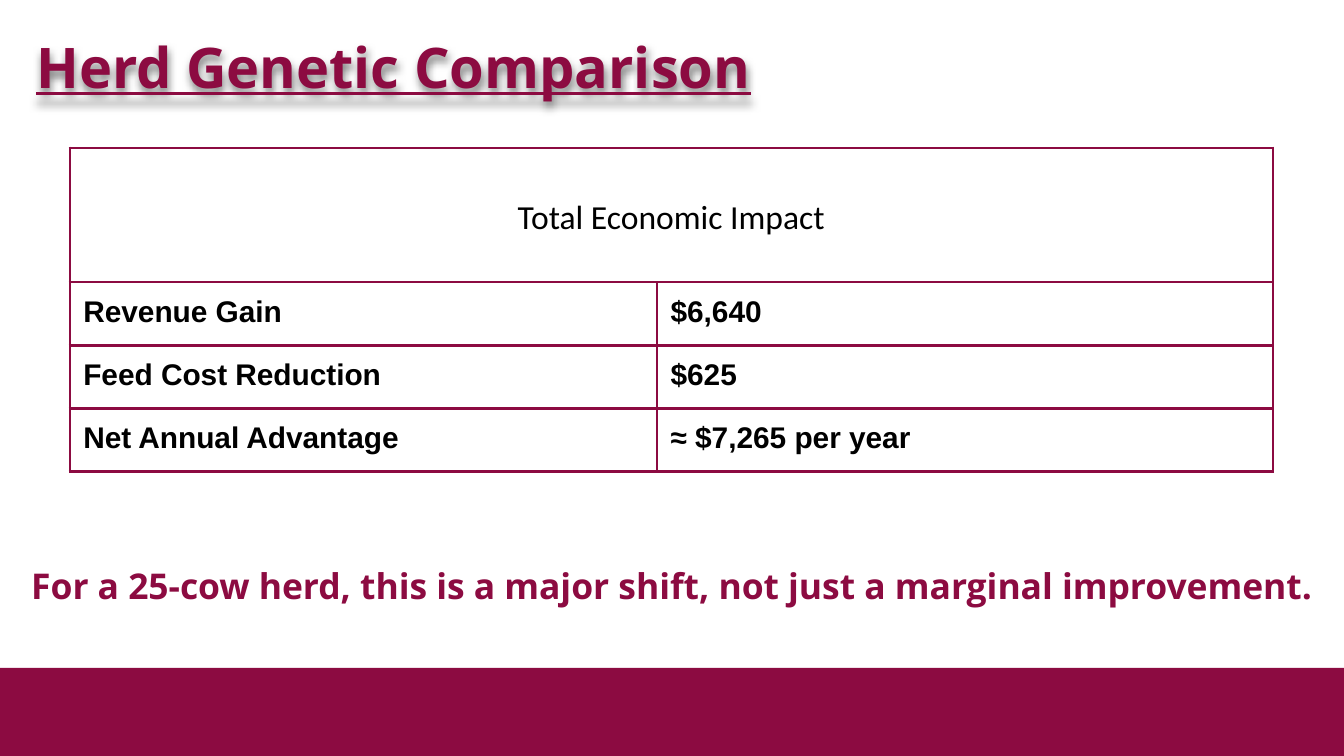
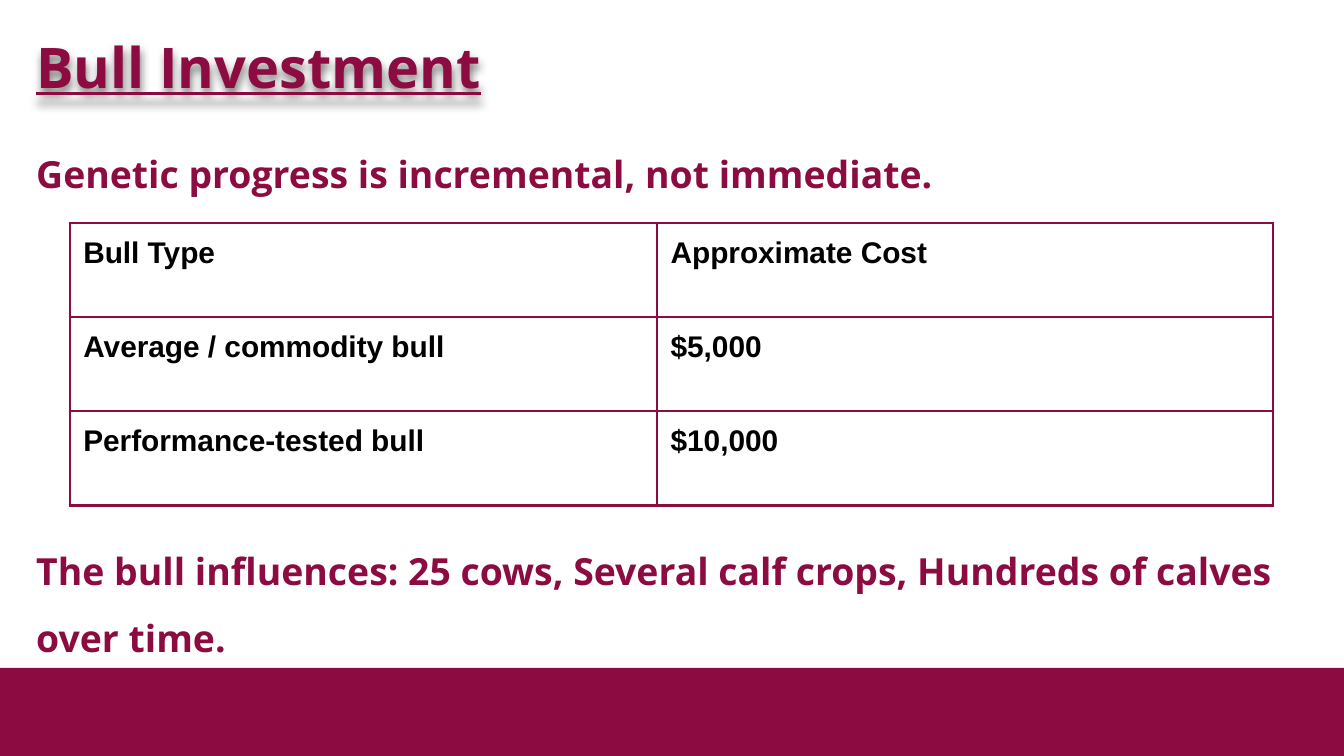
from dataclasses import dataclass

from lxml import etree
from pptx import Presentation
from pptx.dml.color import RGBColor
from pptx.enum.shapes import MSO_SHAPE
from pptx.enum.text import MSO_ANCHOR, PP_ALIGN
from pptx.oxml import parse_xml
from pptx.util import Inches, Pt

RECTANGLE = MSO_SHAPE.RECTANGLE
TOP, MIDDLE = MSO_ANCHOR.TOP, MSO_ANCHOR.MIDDLE
LEFT, CENTER = PP_ALIGN.LEFT, PP_ALIGN.CENTER
DRAWING = "http://schemas.openxmlformats.org/drawingml/2006/main"


@dataclass(frozen=True)
class Theme:
    maroon: str = "8C0B41"
    black: str = "000000"
    heading_font: str = "Open Sans"
    table_font: str = "Arial"
    title_size: int = 30
    statement_size: int = 20
    table_title_size: int = 18
    cell_size: int = 16
    border_width: float = 1.5


THEME = Theme()
WIDTH, HEIGHT = 10, 5.625
MARGIN = 0.2
FULL = (0, WIDTH)
INSET = (MARGIN, WIDTH - 2 * MARGIN)
BAND_TOP = 4.97
TABLE_LEFT = 0.52
COLUMN_WIDTHS = (4.37, 4.58)
CELL_MARGIN = 0.1

# Content; a statement holds text, (left, width), top, height, size, alignment
SLIDES = [
    {
        "title": "Herd Genetic Comparison",
        "table": {
            "top": 1.1,
            "title": "Total Economic Impact",
            "title_height": 1,
            "row_height": 0.47,
            "rows": [
                ("Revenue Gain", "$6,640"),
                ("Feed Cost Reduction", "$625"),
                ("Net Annual Advantage", "≈ $7,265 per year"),
            ],
        },
        "statements": [
            ("For a 25-cow herd, this is a major shift, not just a marginal improvement.",
             FULL, 3.67, 1.21, 19, CENTER),
        ],
    },
    {
        "title": "Bull Investment",
        "table": {
            "top": 1.66,
            "row_height": 0.7,
            "rows": [
                ("Bull Type", "Approximate Cost"),
                ("Average / commodity bull", "$5,000"),
                ("Performance-tested bull", "$10,000"),
            ],
        },
        "statements": [
            ("Genetic progress is incremental, not immediate.",
             INSET, 0.7, 1.02, THEME.statement_size, LEFT),
            ("The bull influences: 25 cows, Several calf crops, Hundreds of calves over time.",
             INSET, 3.9, 1.02, THEME.statement_size, LEFT),
        ],
    },
]


def style_font(font, name, size, color):
    font.name, font.size, font.bold = name, Pt(size), True
    font.color.rgb = RGBColor.from_string(color)


def add_text(slide, text, span, top, height, size, align=LEFT, anchor=MIDDLE, line_spacing=1.5):
    left, width = span
    box = slide.shapes.add_textbox(Inches(left), Inches(top), Inches(width), Inches(height))
    frame = box.text_frame
    frame.word_wrap = True
    frame.vertical_anchor = anchor
    frame.margin_left = frame.margin_right = Inches(0.07)
    frame.margin_top = frame.margin_bottom = Inches(0.04)
    paragraph = frame.paragraphs[0]
    paragraph.text = text
    paragraph.alignment = align
    paragraph.line_spacing = line_spacing
    style_font(paragraph.font, THEME.heading_font, size, THEME.maroon)
    return box


def add_title(slide, text):
    box = add_text(slide, text, INSET, 0.2, 0.75, THEME.title_size, anchor=TOP, line_spacing=1)
    box.text_frame.paragraphs[0].font.underline = True
    box._element.spPr.append(parse_xml(
        f'<a:effectLst xmlns:a="{DRAWING}">'
        f'<a:outerShdw blurRad="{Pt(4.5)}" dist="{Pt(3)}" dir="5400000" algn="bl" rotWithShape="0">'
        '<a:srgbClr val="000000"><a:alpha val="50000"/></a:srgbClr>'
        '</a:outerShdw></a:effectLst>'))


def add_band(slide):
    band = slide.shapes.add_shape(
        RECTANGLE, 0, Inches(BAND_TOP), Inches(WIDTH), Inches(HEIGHT - BAND_TOP))
    band.shadow.inherit = False
    band.fill.solid()
    band.fill.fore_color.rgb = RGBColor.from_string(THEME.maroon)
    band.line.fill.background()


def style_cell(cell):
    properties = cell._tc.get_or_add_tcPr()
    for side in ("lnL", "lnR", "lnT", "lnB"):
        line = etree.SubElement(properties, f"{{{DRAWING}}}{side}", w=str(Pt(THEME.border_width)))
        fill = etree.SubElement(line, f"{{{DRAWING}}}solidFill")
        etree.SubElement(fill, f"{{{DRAWING}}}srgbClr", val=THEME.maroon)
    cell.fill.background()
    cell.margin_left = cell.margin_right = Inches(CELL_MARGIN)
    cell.margin_top = cell.margin_bottom = Inches(CELL_MARGIN)
    style_font(cell.text_frame.paragraphs[0].font, THEME.table_font, THEME.cell_size, THEME.black)


def add_table_title(table, text):
    cell = table.cell(0, 0)
    cell.merge(table.cell(0, len(COLUMN_WIDTHS) - 1))
    cell.text = text
    cell.vertical_anchor = MIDDLE
    paragraph = cell.text_frame.paragraphs[0]
    paragraph.alignment = CENTER
    paragraph.line_spacing = 1.15
    paragraph.space_after = Pt(12)
    paragraph.space_before = Pt(12)
    paragraph.font.size = Pt(THEME.table_title_size)


def add_grid(slide, content):
    title, rows = content.get("title"), content["rows"]
    heights = [content["row_height"]] * len(rows)
    if title:
        heights.insert(0, content["title_height"])
    table = slide.shapes.add_table(
        len(heights), len(COLUMN_WIDTHS), Inches(TABLE_LEFT), Inches(content["top"]),
        Inches(sum(COLUMN_WIDTHS)), Inches(sum(heights))).table
    table.first_row = table.horz_banding = False
    for column, width in zip(table.columns, COLUMN_WIDTHS):
        column.width = Inches(width)
    for row, height in zip(table.rows, heights):
        row.height = Inches(height)
    first = len(heights) - len(rows)
    for row_index, values in enumerate(rows, first):
        for column_index, value in enumerate(values):
            table.cell(row_index, column_index).text = value
    for cell in table.iter_cells():
        style_cell(cell)
    if title:
        add_table_title(table, title)


def main():
    presentation = Presentation()
    presentation.slide_width, presentation.slide_height = Inches(WIDTH), Inches(HEIGHT)
    blank = presentation.slide_layouts[6]
    for content in SLIDES:
        slide = presentation.slides.add_slide(blank)
        add_band(slide)
        add_title(slide, content["title"])
        add_grid(slide, content["table"])
        for statement in content["statements"]:
            add_text(slide, *statement)
    presentation.save("out.pptx")


if __name__ == "__main__":
    main()
